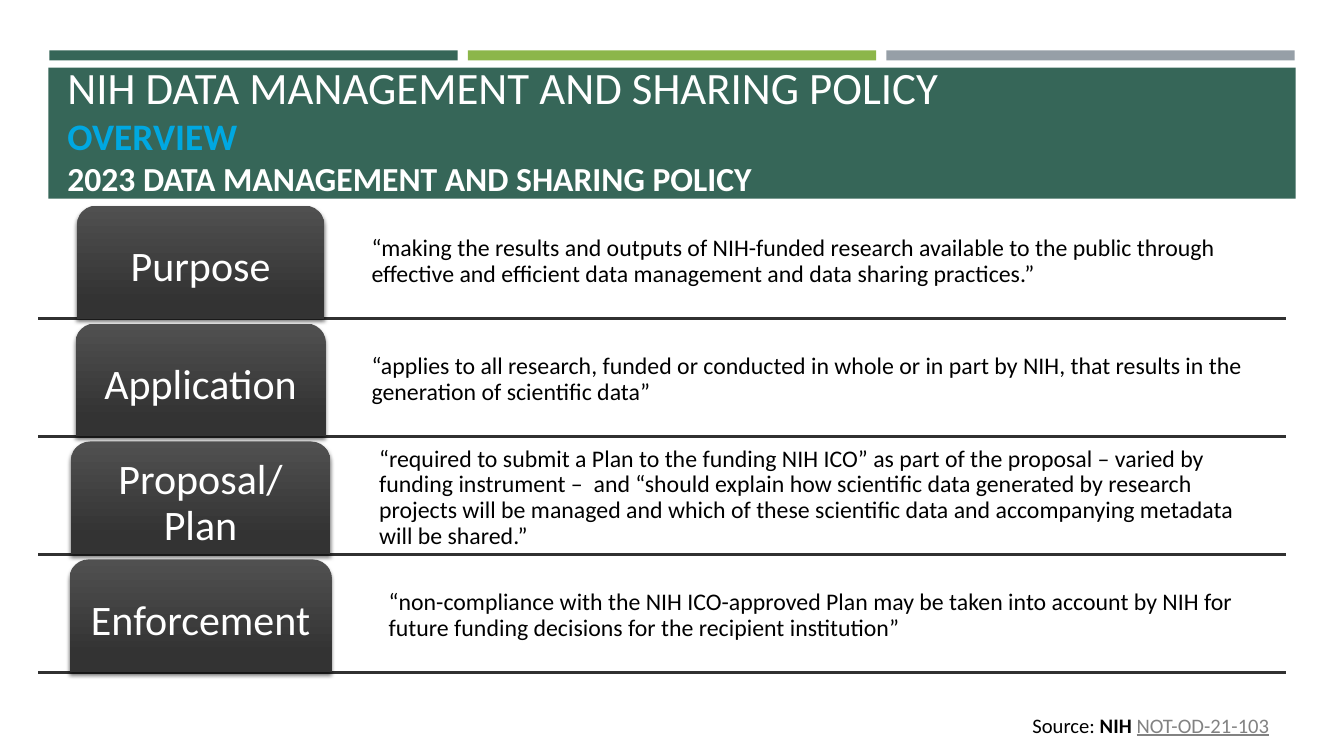
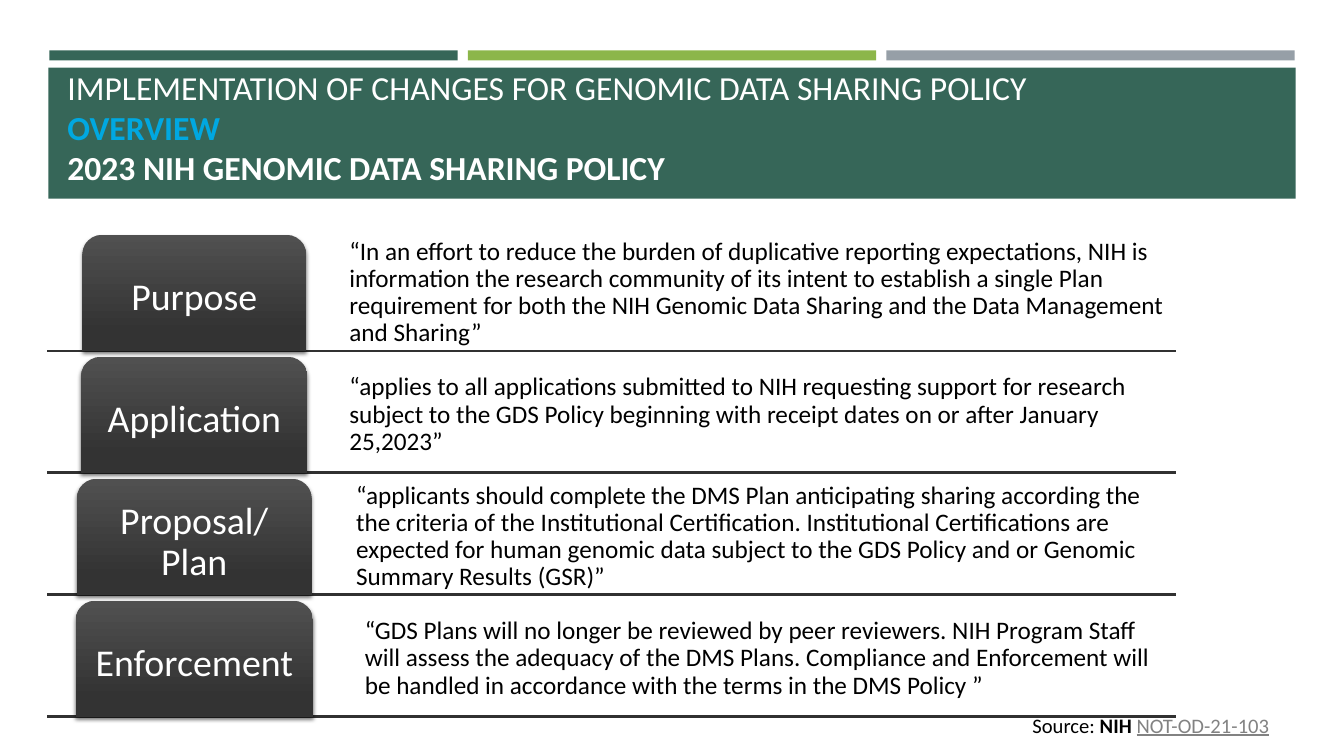
from lxml import etree
from pptx import Presentation
from pptx.dml.color import RGBColor
from pptx.enum.shapes import MSO_CONNECTOR, MSO_SHAPE
from pptx.enum.text import MSO_ANCHOR, PP_ALIGN
from pptx.oxml.ns import qn
from pptx.util import Inches, Pt

FONT = "Calibri"
COLORS = {
    "green": "366658", "lime": "8CB64A", "gray": "969FA7", "white": "FFFFFF",
    "blue": "00A8E1", "black": "000000", "link": "828282", "rule": "313131",
    "tab_top": "505050", "tab_bottom": "333333",
}

# Content
LABELS = ["Purpose", "Application", "Proposal/Plan", "Enforcement"]
SOURCE = [("Source: ", "black", False, False), ("NIH ", "black", True, False),
          ("NOT-OD-21-103", "link", False, True)]
SLIDES = [
    {
        "title": [("NIH DATA MANAGEMENT AND SHARING POLICY", 32),
                  ("OVERVIEW", 26.7),
                  ("2023 DATA MANAGEMENT AND SHARING POLICY", 24)],
        "title_bottom": 1.97,
        "left": 0.38, "top": 2.04, "scale": 1, "row_h": 1.12, "pitch": 1.17,
        "label_size": 30, "quote_size": 17,
        "quotes": [
            "“making the results and outputs of NIH-funded research available to the "
            "public through effective and efficient data management and data sharing "
            "practices.”",
            "“applies to all research, funded or conducted in whole or in part by NIH, "
            "that results in the generation of scientific data”",
            "“required to submit a Plan to the funding NIH ICO” as part of the proposal "
            "– varied by funding instrument –  and “should explain how scientific data "
            "generated by research projects will be managed and which of these "
            "scientific data and accompanying metadata will be shared.”",
            "“non-compliance with the NIH ICO-approved Plan may be taken into account "
            "by NIH for future funding decisions for the recipient institution”",
        ],
    },
    {
        "title": [("IMPLEMENTATION OF CHANGES FOR GENOMIC DATA SHARING POLICY", 24),
                  ("OVERVIEW", 24),
                  ("2023 NIH GENOMIC DATA SHARING POLICY", 24)],
        "title_bottom": 1.86,
        "left": 0.47, "top": 2.33, "scale": 0.905, "row_h": 1.15, "pitch": 1.21,
        "label_size": 27, "quote_size": 18,
        "quotes": [
            "“In an effort to reduce the burden of duplicative reporting expectations, "
            "NIH is information the research community of its intent to establish a "
            "single Plan requirement for both the NIH Genomic Data Sharing and the Data "
            "Management and Sharing”",
            "“applies to all applications submitted to NIH requesting support for "
            "research subject to the GDS Policy beginning with receipt dates on or "
            "after January 25,2023”",
            "“applicants should complete the DMS Plan anticipating sharing according "
            "the the criteria of the Institutional Certification. Institutional "
            "Certifications are expected for human genomic data subject to the GDS "
            "Policy and or Genomic Summary Results (GSR)”",
            "“GDS Plans will no longer be reviewed by peer reviewers. NIH Program Staff "
            "will assess the adequacy of the DMS Plans. Compliance and Enforcement will "
            "be handled in accordance with the terms in the DMS Policy ”",
        ],
    },
]

# Row layout at full scale, measured from the left end of the rules
RULE_W = 12.37
TAB_CENTER, TAB_WIDTHS = 1.61, [2.45, 2.48, 2.57, 2.6]
QUOTE_CENTER, QUOTE_WIDTHS = 7.8, [9.07, 9.07, 8.92, 8.73]


def rgb(name):
    return RGBColor.from_string(COLORS[name])


def style_run(r, size, color, bold=False, underline=False):
    r.font.name, r.font.size = FONT, Pt(size)
    r.font.color.rgb = rgb(color)
    r.font.bold, r.font.underline = bold, underline


def set_frame(tf, anchor, insets):
    tf.word_wrap, tf.vertical_anchor = True, anchor
    tf.margin_left, tf.margin_top, tf.margin_right, tf.margin_bottom = map(Inches, insets)


def add_box(slide, x, y, w, h, anchor, insets):
    sp = slide.shapes.add_textbox(*map(Inches, (x, y, w, h)))
    set_frame(sp.text_frame, anchor, insets)
    return sp.text_frame


def add_shape(slide, kind, x, y, w, h):
    sp = slide.shapes.add_shape(kind, *map(Inches, (x, y, w, h)))
    sp.shadow.inherit = False
    sp.line.fill.background()
    return sp


def add_bar(slide, x, y, w, h, color):
    sp = add_shape(slide, MSO_SHAPE.RECTANGLE, x, y, w, h)
    sp.fill.solid()
    sp.fill.fore_color.rgb = rgb(color)


def set_text(tf, text, size, color, align):
    p = tf.paragraphs[0]
    p.text, p.alignment, p.line_spacing = text, align, 0.9
    style_run(p.runs[0], size, color)


def add_frame(slide, title, bottom):
    # Stripes, title band, title and source line
    for i, color in enumerate(("green", "lime", "gray")):
        add_bar(slide, 0.49 + i * 4.15, 0.5, 4.05, 0.1, color)
    add_bar(slide, 0.48, 0.67, 12.37, 1.3, "green")
    tf = add_box(slide, 0.57, bottom - 1.33, 12.19, 1.33, MSO_ANCHOR.BOTTOM, (0.1, 0, 0.1, 0))
    for i, (text, size) in enumerate(title):
        p = tf.add_paragraph() if i else tf.paragraphs[0]
        p.text = text
        style_run(p.runs[0], size, "blue" if i == 1 else "white", bold=i > 0)
    tf = add_box(slide, 10.14, 7.02, 3.02, 0.35, MSO_ANCHOR.TOP, (0.1, 0.05, 0.1, 0.05))
    for text, color, bold, underline in SOURCE:
        r = tf.paragraphs[0].add_run()
        r.text = text
        style_run(r, 14.7, color, bold, underline)


def add_rule(slide, x, y, w):
    line = slide.shapes.add_connector(
        MSO_CONNECTOR.STRAIGHT, *map(Inches, (x, y, x + w, y)))
    line.line.color.rgb, line.line.width = rgb("rule"), Pt(1.75)
    etree.SubElement(line._element.spPr, qn("a:effectLst"))


def add_tab(slide, x, y, w, h, label, size):
    sp = add_shape(slide, MSO_SHAPE.ROUND_2_SAME_RECTANGLE, x, y, w, h)
    sp.adjustments[0], sp.adjustments[1] = 0.167, 0
    sp.fill.gradient()
    sp.fill.gradient_angle = 270
    for stop, pos, color in zip(sp.fill.gradient_stops, (0, 0.84), ("tab_top", "tab_bottom")):
        stop.position, stop.color.rgb = pos, rgb(color)
    # Soft shadow below the tab
    effects = sp._element.spPr.find(qn("a:effectLst"))
    shadow = etree.SubElement(effects, qn("a:outerShdw"), blurRad=str(Pt(3)),
                              dist=str(Pt(2)), dir="5400000", rotWithShape="0")
    shade = etree.SubElement(shadow, qn("a:srgbClr"), val=COLORS["black"])
    etree.SubElement(shade, qn("a:alpha"), val="55000")
    set_frame(sp.text_frame, MSO_ANCHOR.MIDDLE, (0.12, 0.12, 0.12, 0.06))
    set_text(sp.text_frame, label, size, "white", PP_ALIGN.CENTER)


def add_rows(slide, data):
    left, scale, h = data["left"], data["scale"], data["row_h"]
    tops = [data["top"] + i * data["pitch"] for i in range(len(LABELS))]
    for y in tops:
        add_rule(slide, left, y + h, RULE_W * scale)
    rows = zip(tops, LABELS, data["quotes"], TAB_WIDTHS, QUOTE_WIDTHS)
    for y, label, quote, tab_w, quote_w in rows:
        x = left + (QUOTE_CENTER - quote_w / 2) * scale
        tf = add_box(slide, x, y, quote_w * scale, h, MSO_ANCHOR.MIDDLE, [0.04] * 4)
        set_text(tf, quote, data["quote_size"], "black", PP_ALIGN.LEFT)
        x = left + (TAB_CENTER - tab_w / 2) * scale
        add_tab(slide, x, y, tab_w * scale, h, label, data["label_size"])


def main():
    prs = Presentation()
    prs.slide_width, prs.slide_height = Inches(13.33), Inches(7.5)
    for data in SLIDES:
        slide = prs.slides.add_slide(prs.slide_layouts[6])
        add_frame(slide, data["title"], data["title_bottom"])
        add_rows(slide, data)
    prs.save("out.pptx")


if __name__ == "__main__":
    main()
